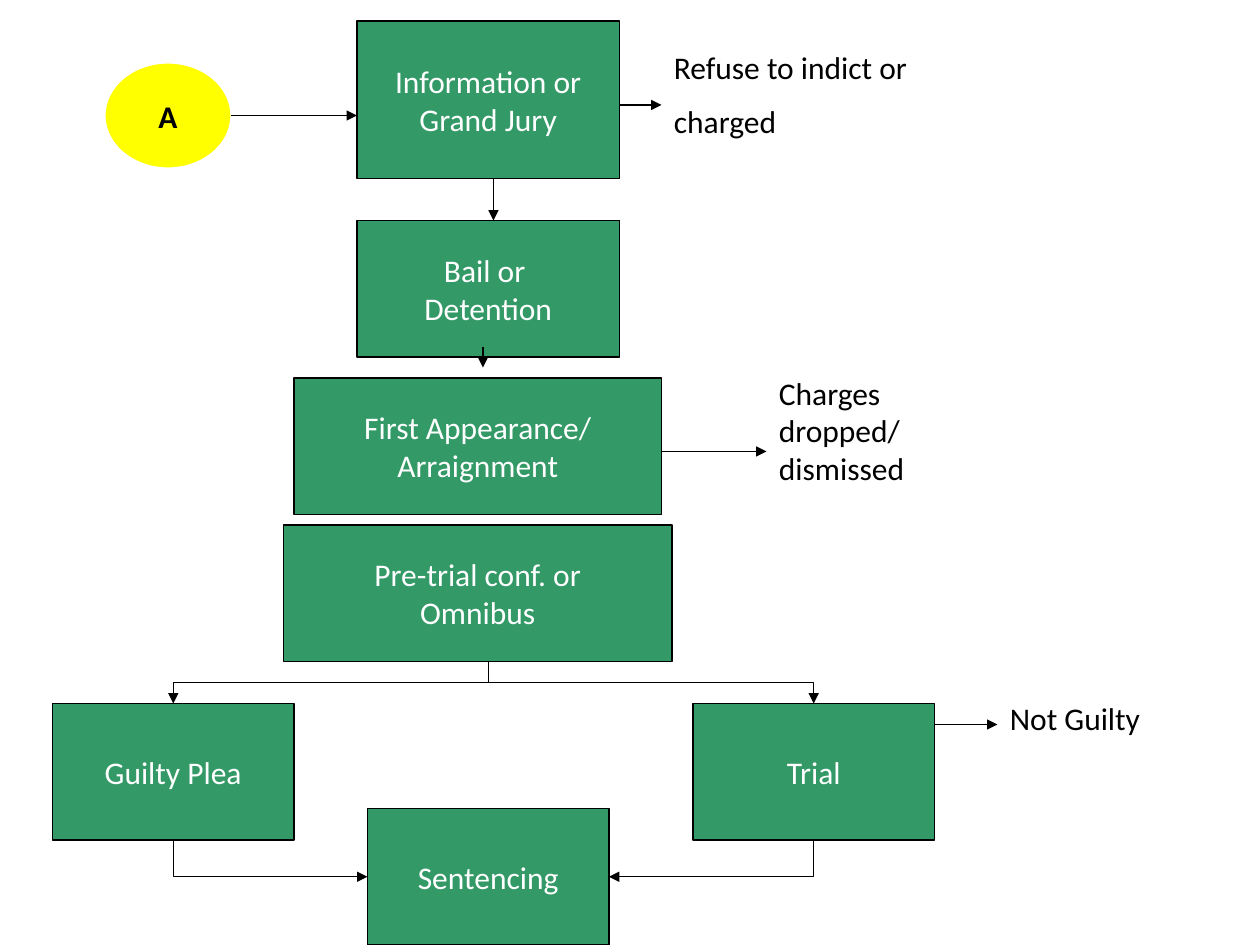
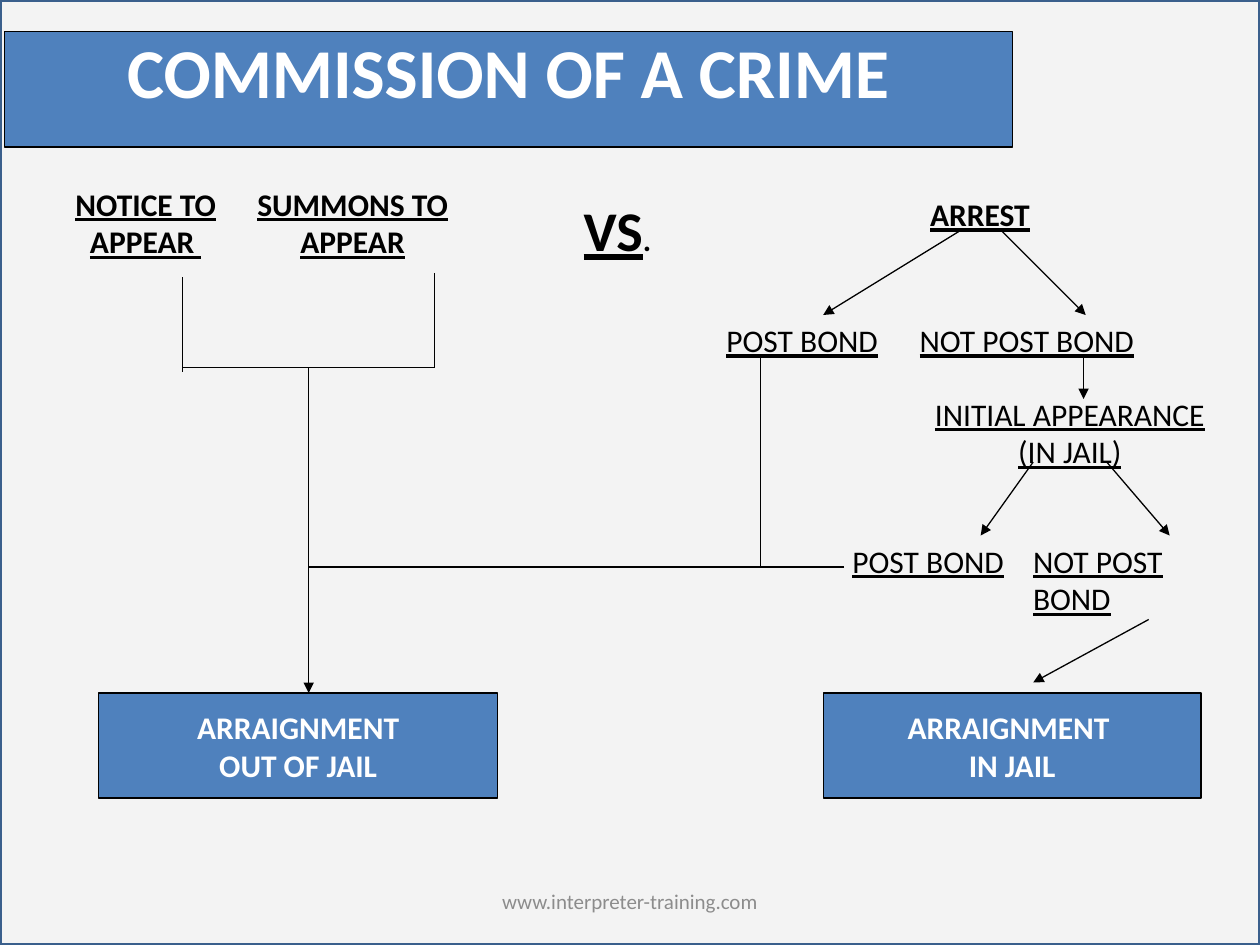
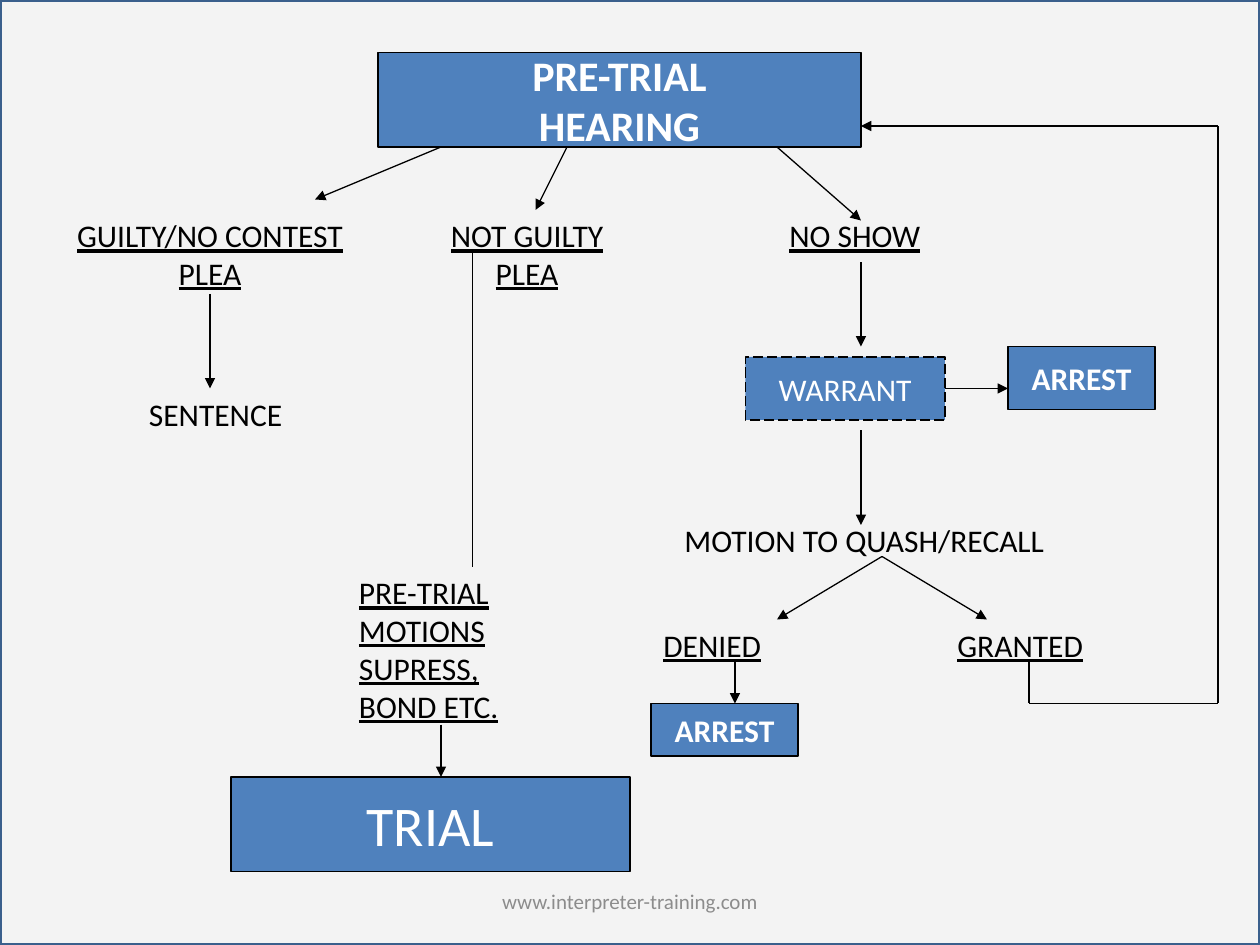
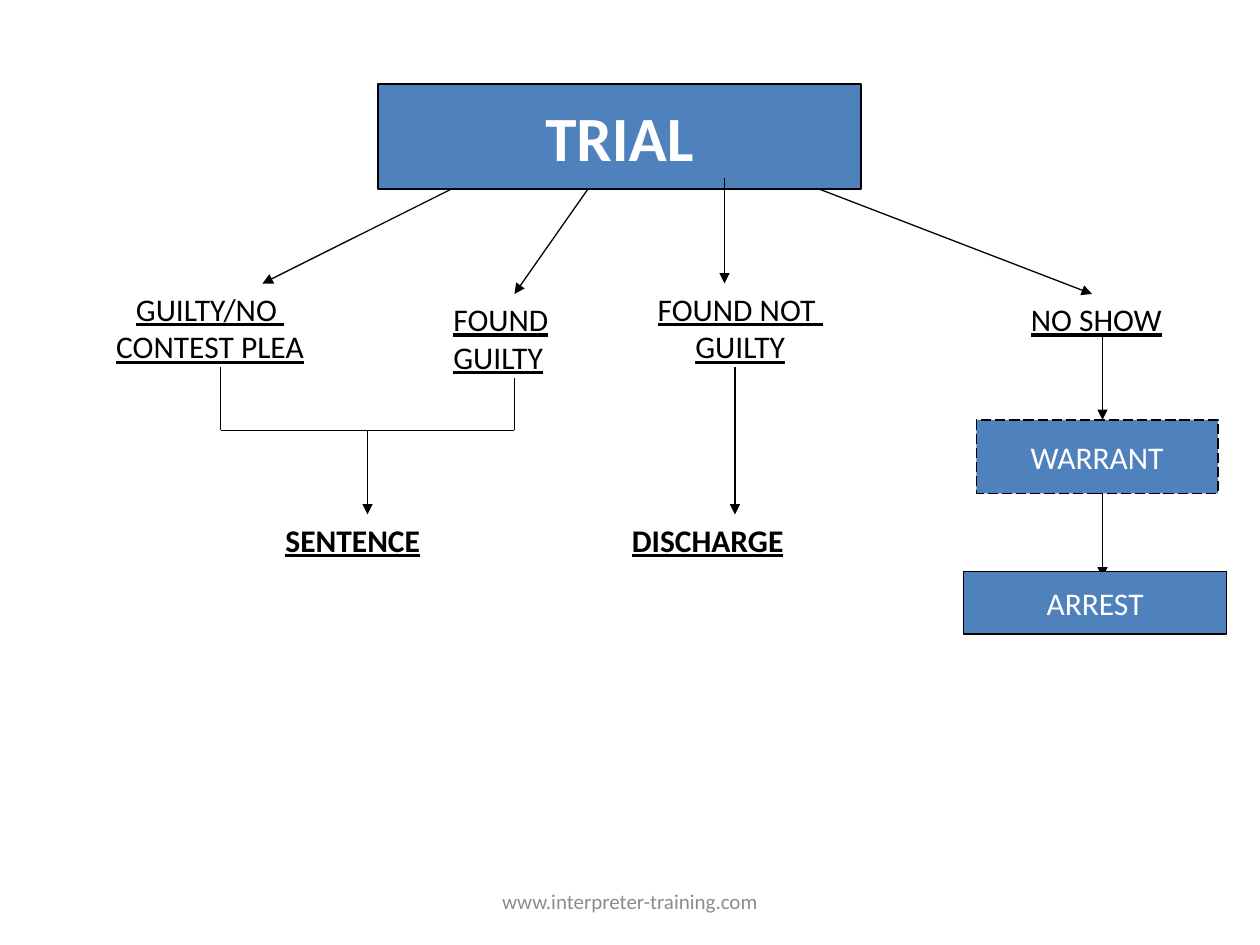
from dataclasses import dataclass

from lxml.etree import SubElement
from pptx import Presentation
from pptx.dml.color import RGBColor
from pptx.enum.dml import MSO_LINE
from pptx.enum.shapes import MSO_CONNECTOR as CONNECTOR, MSO_SHAPE as SHAPE
from pptx.enum.text import MSO_ANCHOR as ANCHOR, MSO_AUTO_SIZE as AUTO_SIZE, PP_ALIGN as ALIGN
from pptx.oxml.ns import qn
from pptx.slide import Slide
from pptx.util import Cm, Pt

COLORS = {
    "green": "339966",
    "blue": "4F81BD",
    "yellow": "FFFF00",
    "veil": "F2F2F2",
    "frame": "3A5F8C",
    "white": "FFFFFF",
    "black": "000000",
    "footer": "8C8C8C",
}
GRID_CM = 2.54 / 12
SLIDE_SIZE = (120, 90)
LINE_HEIGHT, LABEL_PADDING = 3.6, 1.2
FOOTER = "www.interpreter-training.com"
BLANK, TITLE_ONLY = 6, 5


def grid(units):
    """Turn grid units, twelve to the inch, into a length."""
    return Cm(units * GRID_CM)


def color(name):
    return RGBColor.from_string(COLORS[name])


def set_attributes(target, values):
    for name, value in values.items():
        setattr(target, name, value)


def place(shape, left, top, width, height):
    set_attributes(shape, {
        "left": grid(left), "top": grid(top),
        "width": grid(width), "height": grid(height),
    })


def add_run(paragraph, text, ink="black", size=18, bold=False, underline=False):
    run = paragraph.add_run()
    run.text = text
    set_attributes(run.font, {
        "name": "Calibri", "size": Pt(size), "bold": bold, "underline": underline,
    })
    run.font.color.rgb = color(ink)


def add_tabs(paragraph, tabs):
    tab_list = SubElement(paragraph._p.get_or_add_pPr(), qn("a:tabLst"))
    for kind, position in tabs:
        SubElement(tab_list, qn("a:tab"), pos=str(grid(position)), algn=kind)


def write_text(frame, text, align=ALIGN.CENTER, gap=0, tabs=(), **font):
    """Fill a frame with one paragraph a line; tabs stay without underline."""
    for index, line in enumerate(text.split("\n")):
        paragraph = frame.add_paragraph() if index else frame.paragraphs[0]
        paragraph.alignment = align
        if index and gap:
            paragraph.space_before = Pt(gap)
        if tabs:
            add_tabs(paragraph, tabs)
        for position, piece in enumerate(line.split("\t")):
            if position:
                add_run(paragraph, "\t")
            if piece:
                add_run(paragraph, piece, **font)


def paint(shape, fill, outline="black", width=0.75):
    shape.fill.solid()
    shape.fill.fore_color.rgb = color(fill)
    shape.line.color.rgb = color(outline)
    shape.line.width = Pt(width)


@dataclass
class Region:
    """Part of a slide; its methods take positions from its left top corner."""
    slide: Slide
    left: float
    top: float

    def box(self, text, left, top, width, height, fill="blue", ink="white",
            kind=SHAPE.RECTANGLE, outline="black", dashed=False, **font):
        shape = self.slide.shapes.add_shape(kind, 0, 0, 0, 0)
        place(shape, self.left + left, self.top + top, width, height)
        shape.shadow.inherit = False
        paint(shape, fill, outline)
        if dashed:
            shape.line.dash_style = MSO_LINE.LONG_DASH
        set_attributes(shape.text_frame, {
            "word_wrap": False, "vertical_anchor": ANCHOR.MIDDLE,
        })
        write_text(shape.text_frame, text, ink=ink, **font)

    def label(self, text, left, top, width, height=None, align=ALIGN.LEFT, **style):
        lines = text.count("\n") + 1
        shape = self.slide.shapes.add_textbox(0, 0, 0, 0)
        set_attributes(shape.text_frame, {
            "word_wrap": True, "auto_size": AUTO_SIZE.SHAPE_TO_FIT_TEXT,
        })
        write_text(shape.text_frame, text, align, **style)
        place(shape, self.left + left, self.top + top, width,
              height or LABEL_PADDING + LINE_HEIGHT * lines)
        return shape

    def connect(self, kind, x1, y1, x2, y2, arrow):
        connector = self.slide.shapes.add_connector(
            kind, grid(self.left + x1), grid(self.top + y1),
            grid(self.left + x2), grid(self.top + y2))
        connector.line.color.rgb = color("black")
        connector.line.width = Pt(0.75)
        properties = connector.element.spPr
        if arrow:
            SubElement(properties.find(qn("a:ln")), qn("a:tailEnd"), type="triangle")
        SubElement(properties, qn("a:effectLst"))
        return properties

    def lines(self, *ends):
        for end in ends:
            self.connect(CONNECTOR.STRAIGHT, *end, arrow=False)

    def arrows(self, *ends):
        for end in ends:
            self.connect(CONNECTOR.STRAIGHT, *end, arrow=True)

    def elbow(self, x1, y1, x2, y2, preset):
        """Draw a bent arrow that leaves downwards, as a turned connector."""
        across, down = abs(x2 - x1), y2 - y1
        left = (x1 + x2 - down) / 2
        top = (y1 + y2 - across) / 2
        properties = self.connect(
            CONNECTOR.ELBOW, left, top, left + down, top + across, arrow=True)
        transform = properties.find(qn("a:xfrm"))
        transform.set("rot", str((270 if x2 > x1 else 90) * 60000))
        if x2 > x1:
            transform.set("flipH", "1")
        properties.find(qn("a:prstGeom")).set("prst", preset)


def add_veil(slide):
    """Lay a framed, nearly opaque sheet under the title."""
    veil = slide.shapes.add_shape(SHAPE.RECTANGLE, 0, 0, 0, 0)
    place(veil, 0, 0, *SLIDE_SIZE)
    veil.shadow.inherit = False
    paint(veil, "veil", "frame", 2)
    fill_color = veil.element.spPr.find(qn("a:solidFill"))[0]
    SubElement(fill_color, qn("a:alpha"), val="88000")
    slide.shapes.title.element.addprevious(veil.element)


def add_titled_slide(presentation, text, box, size, veiled=True, bottom_margin=0.6):
    slide = presentation.slides.add_slide(presentation.slide_layouts[TITLE_ONLY])
    title = slide.shapes.title
    place(title, *box)
    paint(title, "blue")
    set_attributes(title.text_frame, {
        "word_wrap": True, "auto_size": AUTO_SIZE.NONE,
        "vertical_anchor": ANCHOR.MIDDLE, "margin_top": grid(0.6),
        "margin_bottom": grid(bottom_margin),
    })
    write_text(title.text_frame, text, ink="white", size=size, bold=True)
    if veiled:
        add_veil(slide)
    return slide


def add_footer(slide):
    footer = Region(slide, 41, 83.4).label(
        FOOTER, 0, 0, 38, align=ALIGN.CENTER, ink="footer", size=12)
    set_attributes(footer.text_frame, {
        "auto_size": AUTO_SIZE.NONE, "vertical_anchor": ANCHOR.MIDDLE,
    })


def charging_steps(region):
    region.box("A", 0, 4, 12, 10, fill="yellow", ink="black", outline="white",
               kind=SHAPE.FLOWCHART_CONNECTOR, bold=True)
    for text, *box in (
        ("Information or\nGrand Jury", 24, 0, 25, 15),
        ("Bail or \nDetention", 24, 19, 25, 13),
        ("First Appearance/\nArraignment", 18, 34, 35, 13),
        ("Pre-trial conf. or\nOmnibus", 17, 48, 37, 13),
    ):
        region.box(text, *box, fill="green")
    region.label("Refuse to indict or\ncharged", 53, 2, 33, 13.2, gap=9)
    region.label("Charges dropped/\ndismissed", 63, 33, 19, 15.6)
    region.arrows((12, 9, 24, 9), (37, 15, 37, 19), (36, 31, 36, 33),
                  (49, 8, 53, 8), (53, 41, 63, 41))


def plea_or_trial(region):
    for text, left, top in (("Guilty Plea", 0, 4), ("Trial", 61, 4), ("Sentencing", 30, 14)):
        region.box(text, left, top, 23, 13, fill="green")
    for branch, sentencing_side in ((72.5, 53), (11.5, 30)):
        region.elbow(41.5, 0, branch, 4, "bentConnector3")
        region.elbow(branch, 17, sentencing_side, 20.5, "bentConnector2")
    region.label("Not Guilty", 90, 3, 21, 6)
    region.arrows((84, 6, 90, 6))


def notice_branch(region):
    region.label("\tNOTICE TO\tSUMMONS TO\n\tAPPEAR \tAPPEAR", 0, 0, 52,
                 tabs=(("ctr", 6.7), ("ctr", 26.4)), bold=True, underline=True)
    region.lines((11.4, 9.4, 11.4, 18.4), (35.4, 9, 35.4, 18), (35.4, 18, 11.4, 18))
    region.arrows((23.4, 18, 23.4, 49))
    region.box("ARRAIGNMENT\nOUT OF JAIL", 3.4, 49, 38, 10, bold=True)


def versus(region):
    label = region.label("VS", 0, 0, 11.4, 7.6, size=32, bold=True, underline=True)
    add_run(label.text_frame.paragraphs[0], ".", bold=True)


def arrest_branch(region):
    region.label("ARREST", 19.4, 0, 19, bold=True, underline=True)
    region.label("POST BOND\tNOT POST BOND", 0, 12, 52,
                 tabs=[("l", 18.4)], underline=True)
    region.label("INITIAL APPEARANCE\n(IN JAIL)", 15.4, 19, 37,
                 align=ALIGN.CENTER, underline=True)
    region.label("POST BOND\tNOT POST\n\tBOND", 12, 33, 40,
                 tabs=[("l", 17.2)], underline=True)
    region.box("ARRAIGNMENT \nIN JAIL", 10.4, 48, 36, 10, bold=True)
    region.lines((4.4, 16, 4.4, 36), (12.4, 36, -38.6, 36))
    region.arrows((23.4, 4, 10.4, 12), (27.4, 4, 35.4, 12), (35.2, 16, 35.2, 20),
                  (30.4, 26, 25.4, 33), (37.4, 26, 43.4, 33), (41.4, 41, 30.4, 47))


def plea_branches(region):
    region.label("GUILTY/NO CONTEST\nPLEA", 0, 6, 34, align=ALIGN.CENTER, underline=True)
    region.label("NOT GUILTY\nPLEA", 35, 6, 24.4, align=ALIGN.CENTER, underline=True)
    region.label("SENTENCE", 10, 23, 18.6)
    region.label("PRE-TRIAL\nMOTIONS\nSUPRESS,\nBOND ETC.", 30, 40, 21, underline=True)
    region.box("TRIAL", 19, 60, 38, 9, size=32)
    region.lines((42, 10, 42, 40))
    region.arrows((39, 0, 27, 5), (51, 0, 48, 6), (17, 14, 17, 23), (39, 55, 39, 60))


def warrant_branch(region):
    region.label("NO SHOW", 12, 6, 17.6, underline=True)
    region.box("WARRANT", 9, 20, 19, 6, dashed=True)
    region.box("ARREST", 34, 19, 14, 6, bold=True)
    region.label("MOTION TO QUASH/RECALL", 2, 35, 45)
    region.label("DENIED", 0, 45, 14.4, underline=True)
    region.label("GRANTED", 28, 45, 17.2, underline=True)
    region.box("ARREST", 0, 53, 14, 5, bold=True)
    region.lines((36, 49, 36, 53), (36, 53, 54, 53), (54, 53, 54, -2))
    region.arrows((54, -2, 20, -2), (12, 0, 20, 7), (20, 11, 20, 19), (28, 23, 34, 23),
                  (20, 27, 20, 36), (22, 39, 12, 45), (22, 39, 32, 45), (8, 49, 8, 53))


def verdict_branches(region):
    region.label("GUILTY/NO \nCONTEST PLEA", 0, 9, 28, align=ALIGN.CENTER, underline=True)
    region.label("FOUND\nGUILTY", 36, 10, 15.6, underline=True)
    region.label("FOUND NOT \nGUILTY", 53, 9, 23, align=ALIGN.CENTER, underline=True)
    region.label("SENTENCE", 20, 31, 20, bold=True, underline=True)
    region.label("DISCHARGE", 53, 31, 22.6, bold=True, underline=True)
    region.lines((15, 17, 15, 23), (43, 18, 43, 23), (15, 23, 43, 23))
    region.arrows((37, 0, 19, 9), (50, 0, 43, 10), (63, -1, 63, 9),
                  (29, 23, 29, 31), (64, 17, 64, 31))


def no_show_branch(region):
    region.label("NO SHOW", 19, 10, 17.6, underline=True)
    region.arrows((0, 0, 26, 10), (27, 14, 27, 22), (27, 29, 27, 37))
    region.box("WARRANT", 15, 22, 23, 7, dashed=True)
    region.box("ARREST", 13.8, 36.4, 25, 6)


def main():
    presentation = Presentation()
    presentation.slide_width, presentation.slide_height = map(grid, SLIDE_SIZE)

    process = presentation.slides.add_slide(presentation.slide_layouts[BLANK])
    charging_steps(Region(process, 10, 2))
    plea_or_trial(Region(process, 5, 63))

    crime = add_titled_slide(presentation, "COMMISSION OF A CRIME", (0.4, 3, 96, 11),
                             size=40, bottom_margin=4.2)
    notice_branch(Region(crime, 6, 17))
    versus(Region(crime, 54.4, 18))
    arrest_branch(Region(crime, 68, 18))

    hearing = add_titled_slide(presentation, "PRE-TRIAL\nHEARING", (36, 5, 46, 9), size=24)
    plea_branches(Region(hearing, 3, 14))
    warrant_branch(Region(hearing, 62, 14))

    trial = add_titled_slide(presentation, "TRIAL", (36, 8, 46, 10), size=36, veiled=False)
    verdict_branches(Region(trial, 6, 18))
    no_show_branch(Region(trial, 78, 18))

    for slide in (crime, hearing, trial):
        add_footer(slide)
    presentation.save("out.pptx")


if __name__ == "__main__":
    main()
